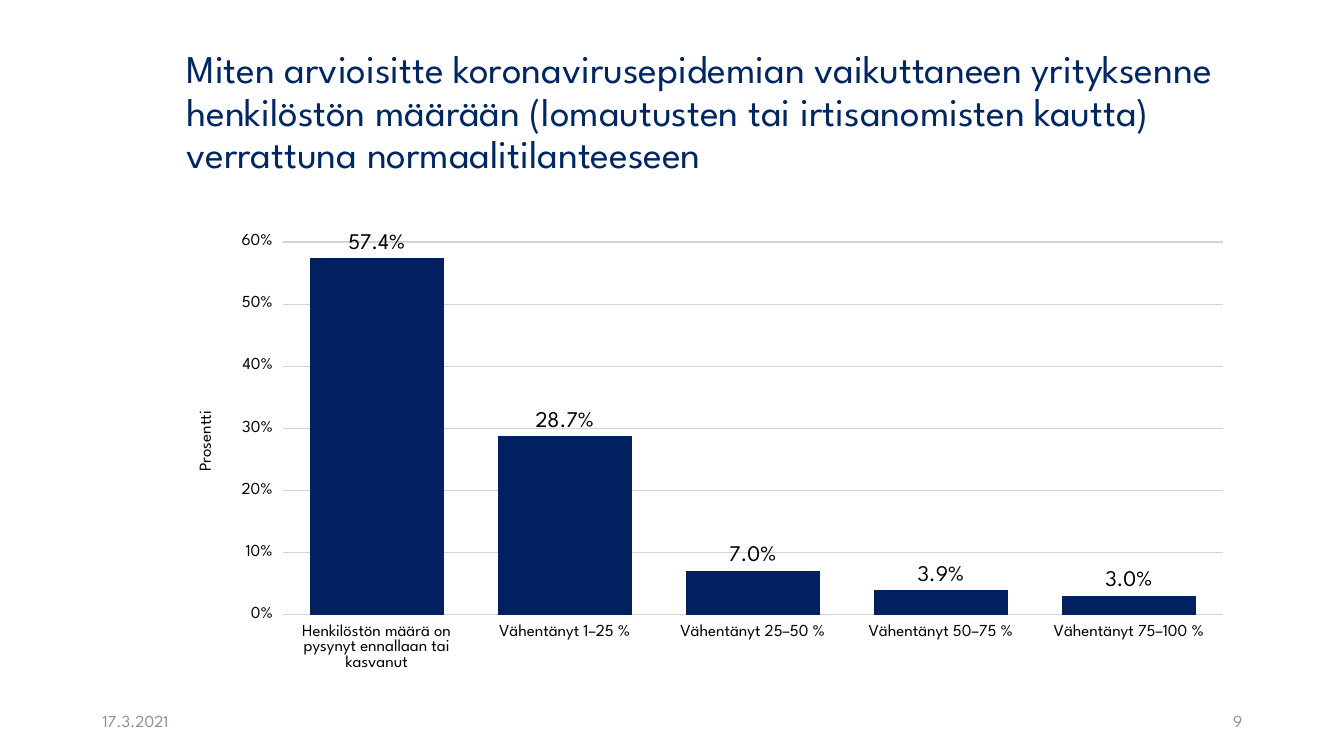
from dataclasses import dataclass

from pptx import Presentation
from pptx.chart.data import CategoryChartData
from pptx.dml.color import RGBColor
from pptx.enum.chart import XL_CHART_TYPE, XL_LABEL_POSITION, XL_TICK_MARK
from pptx.enum.text import MSO_ANCHOR, PP_ALIGN
from pptx.util import Inches, Pt


@dataclass(frozen=True)
class Theme:
    face: str = "League Spartan"
    title: str = "002663"
    bar: str = "002060"
    grid: str = "D3D3D3"
    text: str = "000000"
    muted: str = "8C8E9F"
    head: int = 28
    label: int = 16
    small: int = 12


THEME = Theme()
SHARES = {
    "Henkilöstön määrä on pysynyt ennallaan tai kasvanut": 0.574,
    "Vähentänyt 1–25 %": 0.287,
    "Vähentänyt 25–50 %": 0.07,
    "Vähentänyt 50–75 %": 0.039,
    "Vähentänyt 75–100 %": 0.03,
}


def style(font, size, color):
    font.name = THEME.face
    font.size = Pt(size)
    font.bold = False
    font.color.rgb = RGBColor.from_string(color)


def add_title(slide, box, text):
    title = slide.shapes.title
    title.left, title.top, title.width, title.height = map(Inches, box)
    frame = title.text_frame
    frame.text = text
    frame.word_wrap = True
    frame.vertical_anchor = MSO_ANCHOR.MIDDLE
    para = frame.paragraphs[0]
    para.alignment = PP_ALIGN.LEFT
    para.line_spacing = 0.9
    style(para.runs[0].font, THEME.head, THEME.title)


def add_chart(slide, box):
    data = CategoryChartData()
    data.categories = list(SHARES)
    data.add_series("Series 1", list(SHARES.values()))
    chart = slide.shapes.add_chart(
        XL_CHART_TYPE.COLUMN_CLUSTERED, *map(Inches, box), data).chart
    chart.has_legend = False
    chart.has_title = False
    style(chart.font, THEME.small, THEME.text)

    # Axes
    for axis in (chart.category_axis, chart.value_axis):
        axis.major_tick_mark = XL_TICK_MARK.OUTSIDE
        axis.format.line.fill.background()
        style(axis.tick_labels.font, THEME.small, THEME.text)
    scale = chart.value_axis
    scale.minimum_scale, scale.maximum_scale = 0, 0.65
    scale.major_unit = 0.1
    scale.tick_labels.number_format = "0%"
    scale.tick_labels.number_format_is_linked = False
    grid = scale.major_gridlines.format.line
    grid.color.rgb = RGBColor.from_string(THEME.grid)
    grid.width = Pt(1)
    name = scale.axis_title.text_frame
    name.text = "Prosentti"
    style(name.paragraphs[0].runs[0].font, THEME.small, THEME.text)

    # Columns and their labels
    plot = chart.plots[0]
    plot.gap_width = 40
    plot.vary_by_categories = False
    fill = plot.series[0].format.fill
    fill.solid()
    fill.fore_color.rgb = RGBColor.from_string(THEME.bar)
    labels = plot.series[0].data_labels
    labels.show_value = True
    labels.position = XL_LABEL_POSITION.OUTSIDE_END
    labels.number_format = "0.0%"
    labels.number_format_is_linked = False
    style(labels.font, THEME.label, THEME.text)


def add_footer(slide, box, date, page):
    left, top, width, height = box
    part = 3
    for x, text, align in ((left, date, PP_ALIGN.LEFT),
                           (left + width - part, page, PP_ALIGN.RIGHT)):
        note = slide.shapes.add_textbox(*map(Inches, (x, top, part, height)))
        frame = note.text_frame
        frame.text = text
        frame.word_wrap = True
        frame.vertical_anchor = MSO_ANCHOR.MIDDLE
        para = frame.paragraphs[0]
        para.alignment = align
        style(para.runs[0].font, THEME.small, THEME.muted)


def main():
    deck = Presentation()
    deck.slide_width, deck.slide_height = Inches(13.33), Inches(7.5)
    slide = deck.slides.add_slide(deck.slide_layouts[5])
    add_title(slide, (1.75, 0.4, 10.59, 1.45),
              "Miten arvioisitte koronavirusepidemian vaikuttaneen yrityksenne "
              "henkilöstön määrään (lomautusten tai irtisanomisten kautta) "
              "verrattuna normaalitilanteeseen")
    add_chart(slide, (1.75, 2, 10.59, 4.76))
    add_footer(slide, (0.92, 6.95, 11.5, 0.4), "17.3.2021", "9")
    deck.save("out.pptx")


if __name__ == "__main__":
    main()
